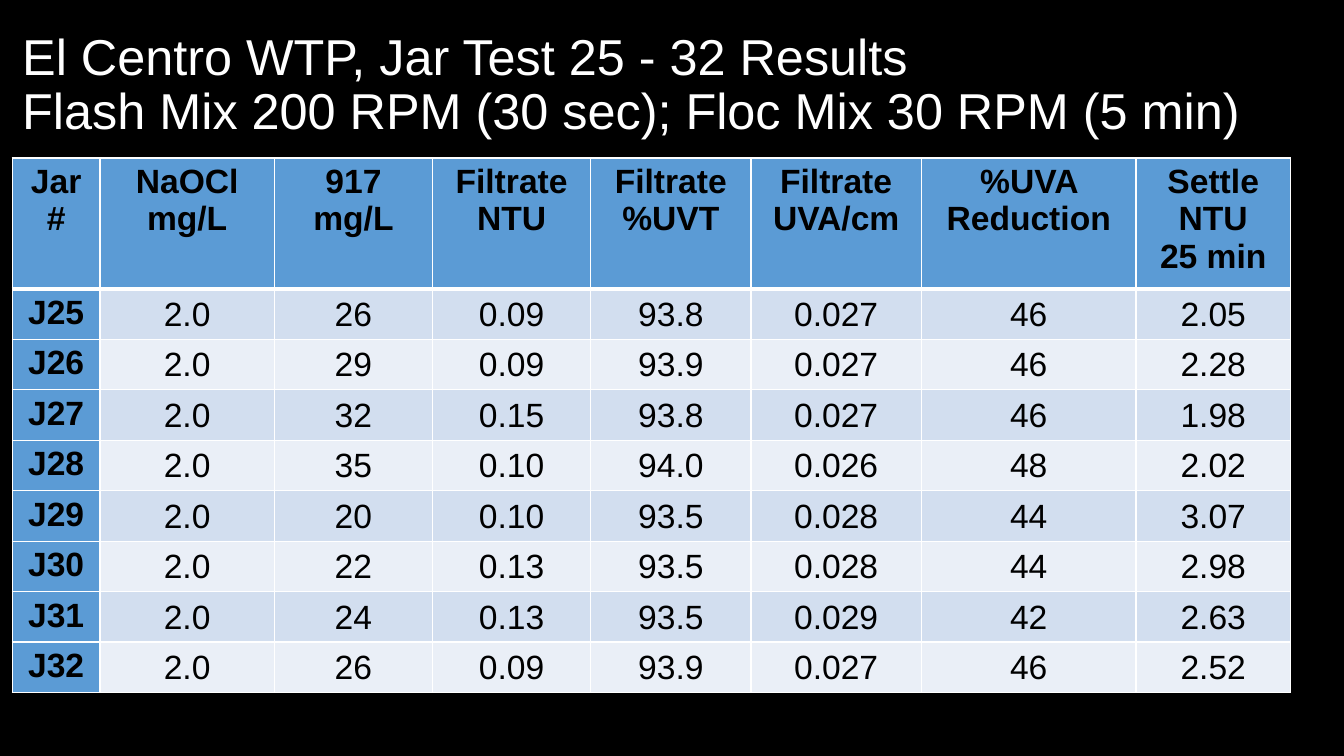
from dataclasses import dataclass

from lxml import etree
from pptx import Presentation
from pptx.dml.color import RGBColor
from pptx.enum.text import MSO_ANCHOR, PP_ALIGN
from pptx.oxml.ns import qn
from pptx.slide import Slide
from pptx.table import _Cell
from pptx.text.text import _Paragraph
from pptx.util import Pt

CENTER = PP_ALIGN.CENTER
TOP = MSO_ANCHOR.TOP
MIDDLE = MSO_ANCHOR.MIDDLE

FONT = "Arial"
BLACK = "000000"
WHITE = "FFFFFF"
BLUE = "5B9BD5"
BANDS = ("D2DEEF", "EAEFF7")
HEADER_HEIGHT = 87.6
JAR_HEIGHT = 34
THIN, THICK = 1, 3

TITLE = (
    "El Centro WTP, Jar Test 25 - 32 Results",
    "Flash Mix 200 RPM (30 sec); Floc Mix 30 RPM (5 min)",
)


@dataclass(frozen=True)
class Measure:
    heading: tuple[str, ...]
    width: float


@dataclass(frozen=True)
class CellStyle:
    fill: str
    bold: bool
    anchor: MSO_ANCHOR
    margins: tuple[float, float, float, float]


MEASURES = (
    Measure(("Jar#",), 62.6),
    Measure(("NaOCl", "mg/L"), 124.6),
    Measure(("917", "mg/L"), 113),
    Measure(("Filtrate", "NTU"), 113),
    Measure(("Filtrate", "%UVT"), 114.5),
    Measure(("Filtrate", "UVA/cm"), 121.7),
    Measure(("%UVA Reduction",), 153.4),
    Measure(("Settle", "NTU", "25 min"), 110.2),
)

RESULTS = (
    ("J25", "2.0", "26", "0.09", "93.8", "0.027", "46", "2.05"),
    ("J26", "2.0", "29", "0.09", "93.9", "0.027", "46", "2.28"),
    ("J27", "2.0", "32", "0.15", "93.8", "0.027", "46", "1.98"),
    ("J28", "2.0", "35", "0.10", "94.0", "0.026", "48", "2.02"),
    ("J29", "2.0", "20", "0.10", "93.5", "0.028", "44", "3.07"),
    ("J30", "2.0", "22", "0.13", "93.5", "0.028", "44", "2.98"),
    ("J31", "2.0", "24", "0.13", "93.5", "0.029", "42", "2.63"),
    ("J32", "2.0", "26", "0.09", "93.9", "0.027", "46", "2.52"),
)

LABEL_STYLE = CellStyle(BLUE, True, TOP, (7.2, 3.6, 7.2, 3.6))
VALUE_STYLES = tuple(
    CellStyle(band, False, MIDDLE, (0.72, 0.72, 0.72, 0)) for band in BANDS
)


def rgb(value: str) -> RGBColor:
    return RGBColor.from_string(value)


def add_run(paragraph: _Paragraph, text: str, size: float, color: str, bold: bool) -> None:
    run = paragraph.add_run()
    run.text = text
    run.font.name = FONT
    run.font.size = Pt(size)
    run.font.bold = bold
    run.font.color.rgb = rgb(color)


def add_borders(cell: _Cell, top: float, bottom: float) -> None:
    properties = cell._tc.get_or_add_tcPr()
    for side, width in (("L", THIN), ("R", THIN), ("T", top), ("B", bottom)):
        line = etree.SubElement(properties, qn(f"a:ln{side}"), w=str(Pt(width)))
        fill = etree.SubElement(line, qn("a:solidFill"))
        etree.SubElement(fill, qn("a:srgbClr"), val=WHITE)


def fill_cell(cell: _Cell, lines: tuple[str, ...], style: CellStyle, top: float, bottom: float) -> None:
    add_borders(cell, top, bottom)
    cell.fill.solid()
    cell.fill.fore_color.rgb = rgb(style.fill)
    cell.vertical_anchor = style.anchor
    left, upper, right, lower = style.margins
    cell.margin_left, cell.margin_top = Pt(left), Pt(upper)
    cell.margin_right, cell.margin_bottom = Pt(right), Pt(lower)
    frame = cell.text_frame
    for index, text in enumerate(lines):
        paragraph = frame.add_paragraph() if index else frame.paragraphs[0]
        paragraph.alignment = CENTER
        add_run(paragraph, text, 24, BLACK, style.bold)


def add_title(slide: Slide) -> None:
    frame = slide.shapes.add_textbox(Pt(8.8), Pt(9.4), Pt(938), Pt(104.4)).text_frame
    frame.word_wrap = True
    frame.vertical_anchor = MIDDLE
    paragraph = frame.paragraphs[0]
    paragraph.line_spacing = 0.9
    for index, text in enumerate(TITLE):
        if index:
            paragraph.add_line_break()
        add_run(paragraph, text, 36, WHITE, False)


def add_results(slide: Slide) -> None:
    width = sum(measure.width for measure in MEASURES)
    height = HEADER_HEIGHT + JAR_HEIGHT * len(RESULTS)
    table = slide.shapes.add_table(
        len(RESULTS) + 1, len(MEASURES), Pt(8.8), Pt(112.8), Pt(width), Pt(height)
    ).table
    table.rows[0].height = Pt(HEADER_HEIGHT)
    for column, measure in enumerate(MEASURES):
        table.columns[column].width = Pt(measure.width)
        fill_cell(table.cell(0, column), measure.heading, LABEL_STYLE, THIN, THICK)
    for row, jar in enumerate(RESULTS, start=1):
        table.rows[row].height = Pt(JAR_HEIGHT)
        value_style = VALUE_STYLES[(row - 1) % len(VALUE_STYLES)]
        top = THICK if row == 1 else THIN
        for column, value in enumerate(jar):
            style = value_style if column else LABEL_STYLE
            fill_cell(table.cell(row, column), (value,), style, top, THIN)


def main() -> None:
    presentation = Presentation()
    presentation.slide_width = Pt(960)
    presentation.slide_height = Pt(540)
    slide = presentation.slides.add_slide(presentation.slide_layouts[6])
    slide.background.fill.solid()
    slide.background.fill.fore_color.rgb = rgb(BLACK)
    add_title(slide)
    add_results(slide)
    presentation.save("out.pptx")


if __name__ == "__main__":
    main()
